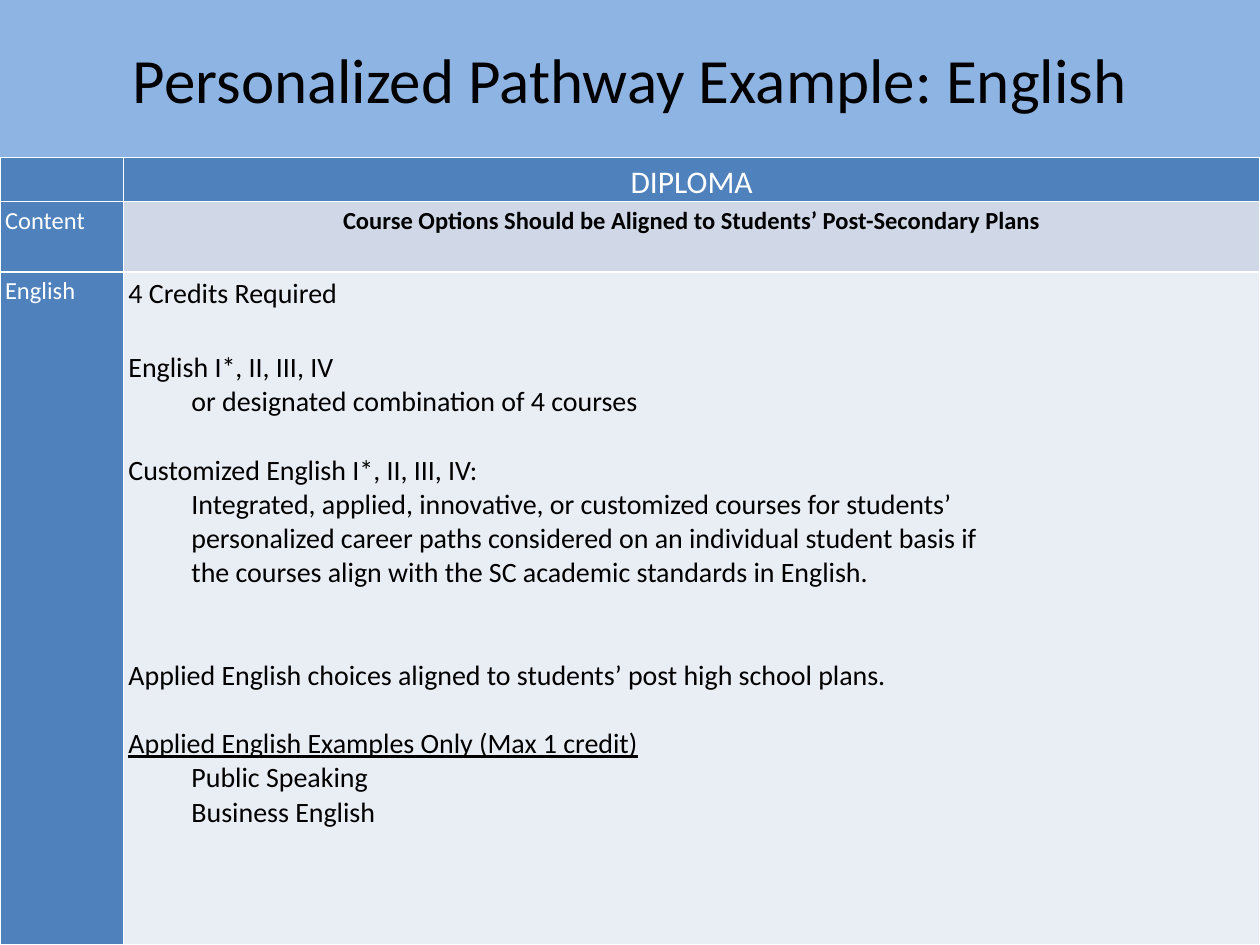
from dataclasses import dataclass

import pptx
import pptx.dml.color
import pptx.enum.text
import pptx.oxml
import pptx.oxml.ns
import pptx.util
from pptx.util import Inches

FONT = "Calibri"
WHITE, BLACK, BLUE = "FFFFFF", "000000", "4F81BD"
LEFT = pptx.enum.text.PP_ALIGN.LEFT
CENTER = pptx.enum.text.PP_ALIGN.CENTER


@dataclass
class Line:
    text: str
    size: float = 16
    color: str = BLACK
    bold: bool = False
    underline: bool = False
    alignment: pptx.enum.text.PP_ALIGN = LEFT
    indent: float = 0
    space_before: float = 0
    spacing: float = 1.0


@dataclass
class Cell:
    fill: str
    lines: list[Line]


def rgb(value: str) -> pptx.dml.color.RGBColor:
    return pptx.dml.color.RGBColor.from_string(value)


def write_lines(text_frame, lines: list[Line]) -> None:
    for index, line in enumerate(lines):
        paragraph = text_frame.add_paragraph() if index else text_frame.paragraphs[0]
        paragraph.text = line.text
        paragraph.alignment = line.alignment
        paragraph.line_spacing = line.spacing
        if line.space_before:
            paragraph.space_before = pptx.util.Pt(line.space_before)
        if line.indent:
            properties = paragraph._p.get_or_add_pPr()
            properties.set("marL", str(Inches(line.indent)))
            properties.set("indent", "0")
        paragraph.font.size = pptx.util.Pt(line.size)
        for run in paragraph.runs:
            run.font.name = FONT
            run.font.size = pptx.util.Pt(line.size)
            run.font.bold = line.bold
            run.font.underline = line.underline
            run.font.color.rgb = rgb(line.color)


def add_borders(cell, color: str, points: float) -> None:
    properties = cell._tc.get_or_add_tcPr()
    namespace = pptx.oxml.ns.nsdecls("a")
    for index, side in enumerate(("lnL", "lnR", "lnT", "lnB")):
        border = pptx.oxml.parse_xml(
            f'<a:{side} {namespace} w="{pptx.util.Pt(points)}"><a:solidFill>'
            f'<a:srgbClr val="{color}"/></a:solidFill></a:{side}>'
        )
        properties.insert(index, border)


def add_title(slide, text: str) -> None:
    title = slide.shapes.add_textbox(Inches(0), Inches(0), Inches(10), Inches(1.25))
    title.text_frame.word_wrap = True
    title.text_frame.vertical_anchor = pptx.enum.text.MSO_ANCHOR.MIDDLE
    write_lines(title.text_frame, [Line(text, size=36, alignment=CENTER)])


def add_pathway_table(slide, rows: list[list[Cell]], widths: list[float], heights: list[float]) -> None:
    table = slide.shapes.add_table(
        len(rows), len(widths), Inches(0), Inches(1.25), Inches(sum(widths)), Inches(sum(heights))
    ).table
    for column, width in zip(table.columns, widths):
        column.width = Inches(width)
    for row, height, contents in zip(table.rows, heights, rows):
        row.height = Inches(height)
        for cell, content in zip(row.cells, contents):
            cell.margin_left = cell.margin_right = Inches(0.04)
            cell.margin_top = cell.margin_bottom = Inches(0)
            cell.fill.solid()
            cell.fill.fore_color.rgb = rgb(content.fill)
            add_borders(cell, WHITE, 1)
            write_lines(cell.text_frame, content.lines)


def label(text: str, size: float = 14, alignment=LEFT) -> Cell:
    return Cell(BLUE, [Line(text, size, WHITE, alignment=alignment, spacing=1.15)])


def main() -> None:
    """Build the English pathway slide."""
    presentation = pptx.Presentation()
    presentation.slide_width, presentation.slide_height = Inches(10), Inches(7.5)
    slide = presentation.slides.add_slide(presentation.slide_layouts[6])
    slide.background.fill.solid()
    slide.background.fill.fore_color.rgb = rgb("8EB4E3")

    blank_line = 19.5
    course_lines = [
        Line("4 Credits Required", spacing=1.15),
        Line("English I*, II, III, IV", space_before=22.5),
        Line("or designated combination of 4 courses", indent=0.5),
        Line("Customized English I*, II, III, IV:", space_before=blank_line),
        Line("Integrated, applied, innovative, or customized courses for students’", indent=0.5),
        Line("personalized career paths considered on an individual student basis if", indent=0.5),
        Line("the courses align with the SC academic standards in English.", indent=0.5),
        Line("Applied English choices aligned to students’ post high school plans.", space_before=2 * blank_line),
        Line("Applied English Examples Only (Max 1 credit)", underline=True, space_before=blank_line),
        Line("Public Speaking", indent=0.5),
        Line("Business English", indent=0.5),
    ]
    alignment_note = Line(
        "Course Options Should be Aligned to Students’ Post-Secondary Plans",
        size=14, bold=True, alignment=CENTER, spacing=1.15,
    )
    rows = [
        [label(""), label("DIPLOMA", 18, CENTER)],
        [label("Content"), Cell("D0D8E8", [alignment_note])],
        [label("English"), Cell("E9EDF4", course_lines)],
    ]
    add_title(slide, "Personalized Pathway Example: English")
    add_pathway_table(slide, rows, widths=[0.98, 9.02], heights=[0.35, 0.56, 5.34])
    presentation.save("out.pptx")


if __name__ == "__main__":
    main()
